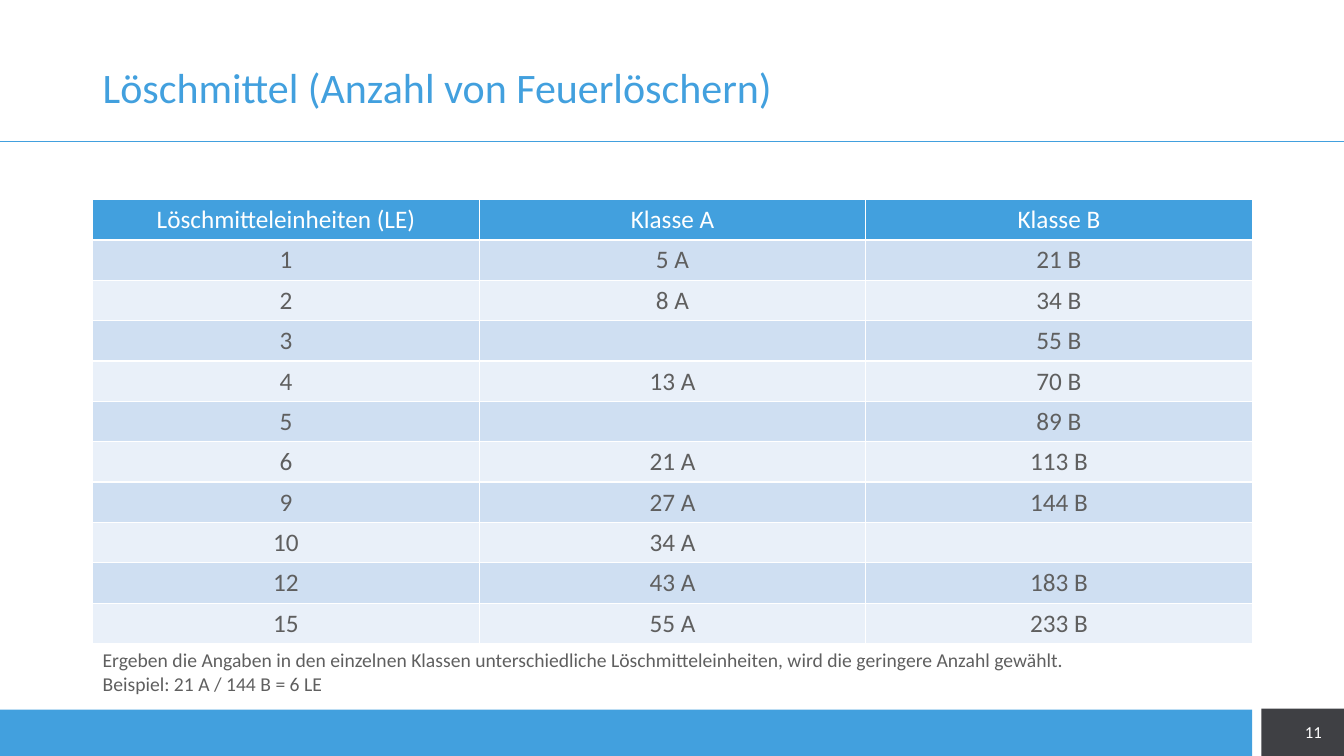
"""Build the slide on extinguishing units and fire extinguisher classes."""
from lxml.etree import SubElement
from pptx import Presentation
from pptx.dml.color import RGBColor
from pptx.enum.shapes import MSO_CONNECTOR, MSO_SHAPE
from pptx.enum.text import MSO_ANCHOR, PP_ALIGN
from pptx.oxml import parse_xml
from pptx.oxml.ns import nsdecls, qn
from pptx.util import Inches, Pt

BLUE, DARK, GREY, WHITE = "42A0DE", "3F4044", "5F5F5F", "FFFFFF"
BANDS = ["E9F0F9", "CFDFF2"]


def paint(color_format, color):
    color_format.rgb = RGBColor.from_string(color)


def write(frame, text, size, color, align=PP_ALIGN.LEFT, spacing=1.0):
    frame.word_wrap = True
    frame.text = text
    for paragraph in frame.paragraphs:
        formats = {"alignment": align, "line_spacing": spacing}
        for name, value in formats.items():
            setattr(paragraph, name, value)
        paragraph.font.name = "Calibri"
        paragraph.font.size = Pt(size)
        paint(paragraph.font.color, color)


prs = Presentation()
prs.slide_width, prs.slide_height = Inches(13.33), Inches(7.5)
slide = prs.slides.add_slide(prs.slide_layouts[6])
shapes = slide.shapes

for left, top, width, color in [(12.51, 7.03, 0.82, DARK), (0, 7.04, 12.42, BLUE)]:
    footer_bar = shapes.add_shape(
        MSO_SHAPE.RECTANGLE, Inches(left), Inches(top), Inches(width), Inches(0.47))
    footer_bar.shadow.inherit = False
    footer_bar.fill.solid()
    paint(footer_bar.fill.fore_color, color)
    footer_bar.line.fill.background()

title_rule = shapes.add_connector(
    MSO_CONNECTOR.STRAIGHT, Inches(0), Inches(1.4), Inches(13.33), Inches(1.4))
paint(title_rule.line.color, BLUE)
title_rule.line.width = Pt(0.5)
SubElement(title_rule.element.spPr, qn("a:effectLst"))

note = ("Ergeben die Angaben in den einzelnen Klassen unterschiedliche "
        "Löschmitteleinheiten, wird die geringere Anzahl gewählt.\n"
        "Beispiel: 21 A / 144 B = 6 LE")
texts = [
    ((12.64, 7.06, 0.57, 0.4), MSO_ANCHOR.MIDDLE,
     ("11", 12, WHITE, PP_ALIGN.RIGHT)),
    ((0.92, 0.4, 11.5, 0.98), MSO_ANCHOR.MIDDLE,
     ("Löschmittel (Anzahl von Feuerlöschern)", 30, BLUE, PP_ALIGN.LEFT, 0.9)),
    ((0.92, 6.38, 11.5, 0.57), MSO_ANCHOR.TOP, (note, 14, GREY)),
]
for place, anchor, content in texts:
    frame = shapes.add_textbox(*map(Inches, place)).text_frame
    frame.vertical_anchor = anchor
    write(frame, *content)

rows = [
    ("Löschmitteleinheiten (LE)", "Klasse A", "Klasse B"),
    ("1", "5 A", "21 B"),
    ("2", "8 A", "34 B"),
    ("3", "", "55 B"),
    ("4", "13 A", "70 B"),
    ("5", "", "89 B"),
    ("6", "21 A", "113 B"),
    ("9", "27 A", "144 B"),
    ("10", "34 A", ""),
    ("12", "43 A", "183 B"),
    ("15", "55 A", "233 B"),
]
units = shapes.add_table(
    len(rows), 3, Inches(0.92), Inches(1.98), Inches(11.5), Inches(4.4)).table
for r, row in enumerate(rows):
    for c, text in enumerate(row):
        cell = units.cell(r, c)
        write(cell.text_frame, text, 18, GREY if r else WHITE, PP_ALIGN.CENTER)
        cell.fill.solid()
        paint(cell.fill.fore_color, BANDS[r % 2] if r else BLUE)
        properties = cell._tc.get_or_add_tcPr()
        for i, side in enumerate("LRTB"):
            properties.insert(i, parse_xml(
                f'<a:ln{side} {nsdecls("a")} w="{Pt(1)}"><a:solidFill>'
                f'<a:srgbClr val="{WHITE}"/></a:solidFill></a:ln{side}>'))

prs.save("out.pptx")
